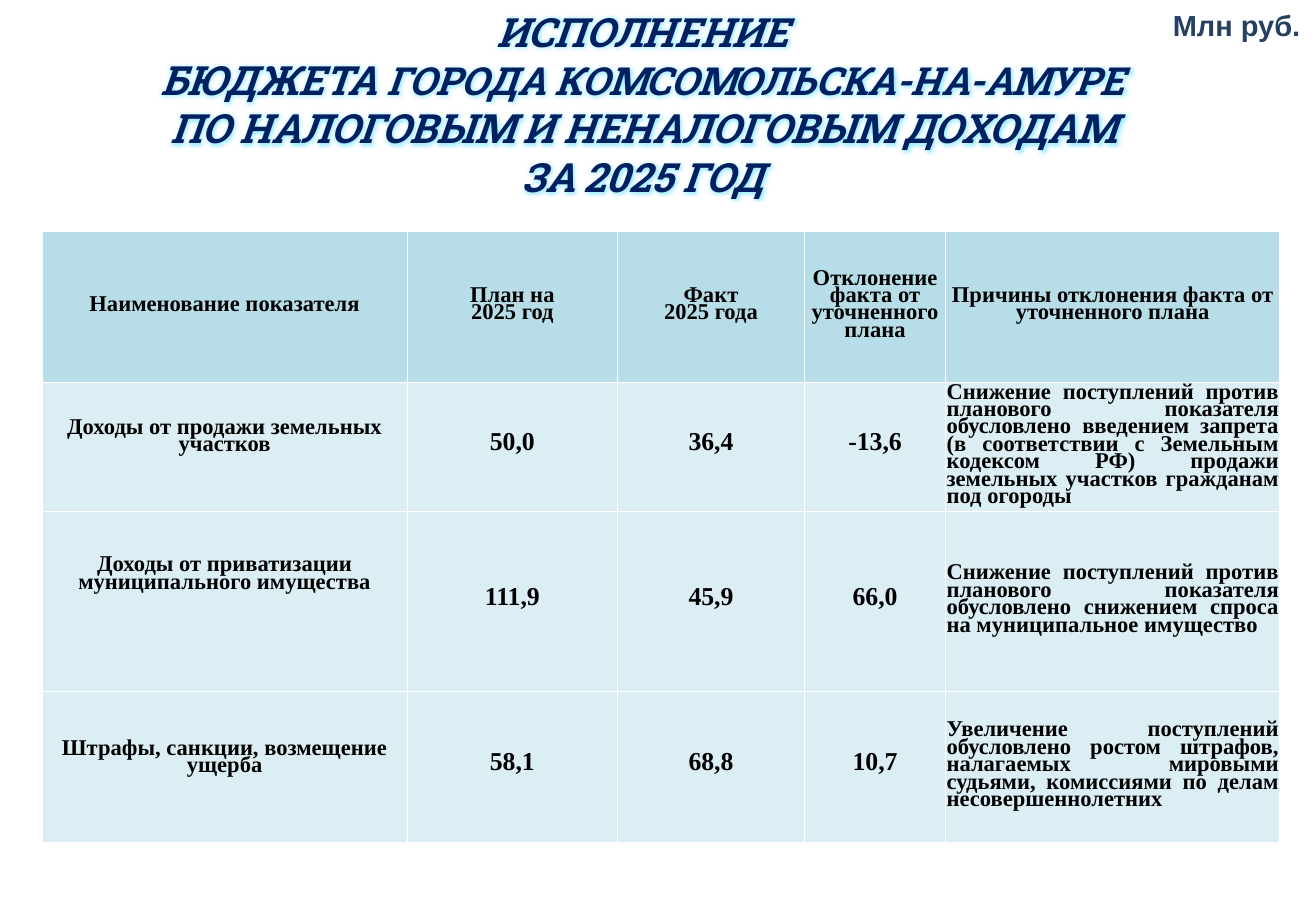
"""Build the slide on city budget execution: a title, a unit label and a table."""
import pptx
import pptx.dml.color
import pptx.enum.text
import pptx.oxml
import pptx.oxml.ns
import pptx.util

TITLE = [
    [("ИСПОЛНЕНИЕ", 25)],
    [("БЮДЖЕТА ", 25), ("ГОРОДА КОМСОМОЛЬСКА-НА-АМУРЕ", 24)],
    [("ПО НАЛОГОВЫМ И НЕНАЛОГОВЫМ ДОХОДАМ", 25)],
    [("ЗА 2025 ГОД", 25)],
]
UNIT = "Млн руб."
HEADER = [
    ["Наименование показателя"],
    ["План на", "2025 год"],
    ["Факт", "2025 года"],
    ["Отклонение факта от уточненного плана"],
    ["Причины отклонения факта от уточненного плана"],
]
ROWS = [
    [["Доходы от продажи земельных", "участков"], ["50,0"], ["36,4"], ["-13,6"],
     ["Снижение поступлений против планового показателя обусловлено введением запрета "
      "(в соответствии с Земельным кодексом РФ) продажи земельных участков гражданам "
      "под огороды"]],
    [["Доходы от приватизации муниципального имущества"], ["111,9"], ["45,9"], ["66,0"],
     ["Снижение поступлений против планового показателя обусловлено снижением спроса "
      "на муниципальное имущество"]],
    [["Штрафы, санкции, возмещение ущерба"], ["58,1"], ["68,8"], ["10,7"],
     ["Увеличение поступлений обусловлено ростом штрафов, налагаемых мировыми судьями, "
      "комиссиями по делам несовершеннолетних"]],
]
COL_WIDTHS = [365, 210, 187, 141, 334]
ROW_HEIGHTS = [151, 129, 180, 151]
NAME_LIFT = [0, 17, 51, 15]
COLORS = {"title": "002060", "glow": "00CCFF", "unit": "254061", "text": "000000",
          "head": "B7DEE8", "body": "DBEEF4", "border": "FFFFFF"}
PX = 7896
ALIGN = pptx.enum.text.PP_ALIGN


def px(n):
    return pptx.util.Emu(n * PX)


def rgb(name):
    return pptx.dml.color.RGBColor.from_string(COLORS[name])


def element(xml):
    return pptx.oxml.parse_xml(xml.replace(">", " " + pptx.oxml.ns.nsdecls("a") + ">", 1))


def add_run(p, text, size, font, color, italic=False):
    r = p.add_run()
    r.text = text
    r.font.size = pptx.util.Pt(size)
    r.font.name = font
    r.font.bold = True
    r.font.italic = italic
    r.font.color.rgb = rgb(color)
    return r


def add_box(s, left, top, width, height, wrap):
    sp = s.shapes.add_textbox(px(left), px(top), px(width), px(height))
    tf = sp.text_frame
    tf.word_wrap = wrap
    tf.margin_left = tf.margin_right = px(14)
    tf.margin_top = tf.margin_bottom = px(7)
    return tf


def next_paragraph(tf, i):
    return tf.paragraphs[0] if i == 0 else tf.add_paragraph()


def add_title(s):
    tf = add_box(s, 24, 0, 1236, 210, True)
    for i, line in enumerate(TITLE):
        p = next_paragraph(tf, i)
        p.alignment = ALIGN.CENTER
        for text, size in line:
            r = add_run(p, text, size, "Roboto Slab", "title", True)
            glow = element(f'<a:effectLst><a:glow rad="63500"><a:srgbClr val="{COLORS["glow"]}">'
                           '<a:alpha val="40000"/></a:srgbClr></a:glow></a:effectLst>')
            r.font._element.find(pptx.oxml.ns.qn("a:solidFill")).addnext(glow)


def fill_cell(cell, lines, size, align, color, lift):
    cell.vertical_anchor = pptx.enum.text.MSO_ANCHOR.MIDDLE
    cell.margin_left = cell.margin_right = cell.margin_top = px(1)
    cell.margin_bottom = px(lift)
    cell.fill.solid()
    cell.fill.fore_color.rgb = rgb(color)
    for i, side in enumerate(("lnL", "lnR", "lnT", "lnB")):
        border = element(f'<a:{side} w="12700"><a:solidFill><a:srgbClr val="{COLORS["border"]}"/>'
                         f'</a:solidFill></a:{side}>')
        cell._tc.get_or_add_tcPr().insert(i, border)
    for i, text in enumerate(lines):
        p = next_paragraph(cell.text_frame, i)
        p.alignment = align
        p.line_spacing = pptx.util.Pt(10.8)
        add_run(p, text, size, "Times New Roman", "text")


def add_budget_table(s):
    rows = [HEADER] + ROWS
    table = s.shapes.add_table(len(rows), len(HEADER), px(42), px(231),
                               px(sum(COL_WIDTHS)), px(sum(ROW_HEIGHTS))).table
    for col, width in zip(table.columns, COL_WIDTHS):
        col.width = px(width)
    for row, height in zip(table.rows, ROW_HEIGHTS):
        row.height = px(height)
    for i, row in enumerate(rows):
        for j, lines in enumerate(row):
            size = 16 if i and j in (1, 2, 3) else 14
            align = ALIGN.JUSTIFY if i and j == 4 else ALIGN.CENTER
            fill_cell(table.cell(i, j), lines, size, align, "body" if i else "head",
                      0 if j else NAME_LIFT[i])


def main():
    prs = pptx.Presentation()
    prs.slide_width, prs.slide_height = px(1315), px(918)
    s = prs.slides.add_slide(prs.slide_layouts[6])
    add_title(s)
    add_budget_table(s)
    tf = add_box(s, 1158, 0, 157, 50, False)
    add_run(tf.paragraphs[0], UNIT, 18, "Arial", "unit")
    prs.save("out.pptx")


if __name__ == "__main__":
    main()
